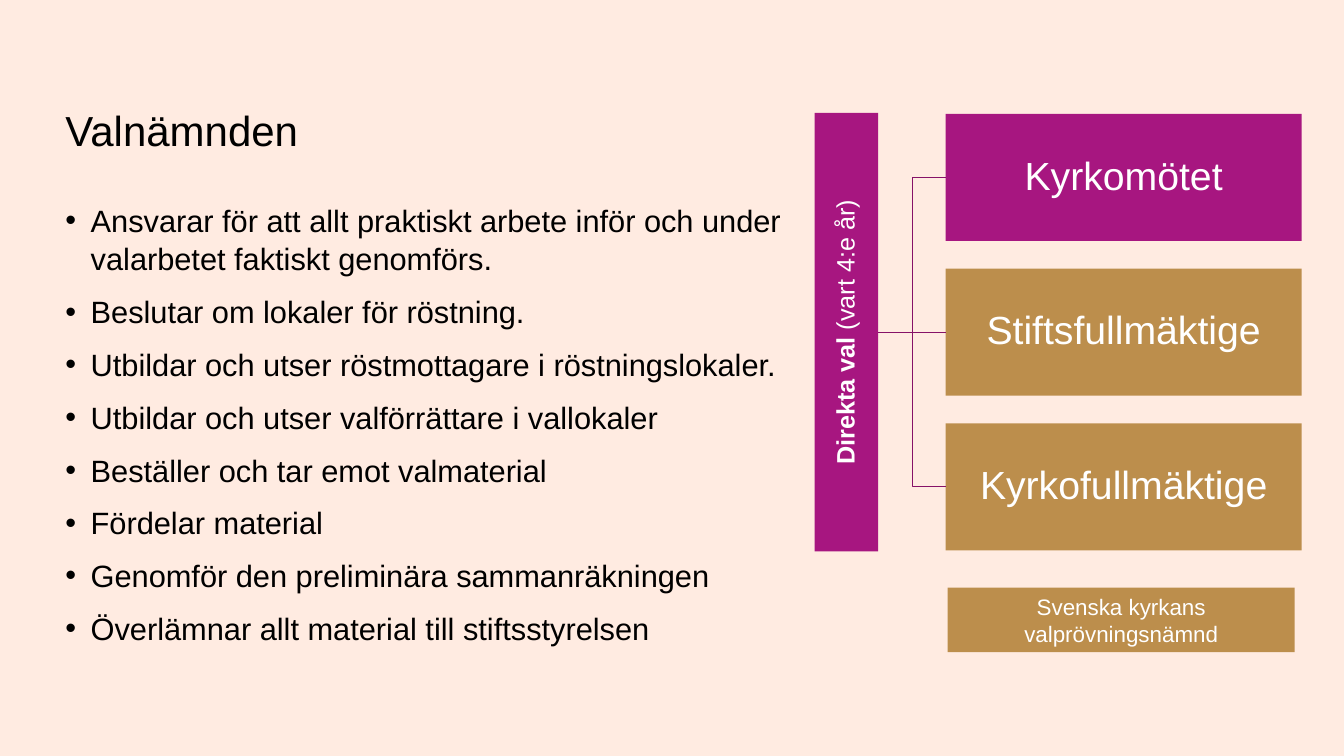
"""Build the slide on the election board and the direct elections."""
from lxml.etree import SubElement as Sub
from pptx import Presentation
from pptx.dml.color import RGBColor
from pptx.enum.shapes import MSO_CONNECTOR as Conn, MSO_SHAPE as Shape
from pptx.enum.text import MSO_ANCHOR as Anchor, PP_ALIGN as Align
from pptx.oxml.ns import qn
from pptx.util import Inches, Pt

CREAM = RGBColor(0xFF, 0xEB, 0xE1)
BLACK = RGBColor(0, 0, 0)
WHITE = RGBColor(0xFF, 0xFF, 0xFF)
PLUM = RGBColor(0xA7, 0x16, 0x80)
DARK = RGBColor(0x86, 0x12, 0x67)
GOLD = RGBColor(0xBC, 0x8E, 0x4C)

TASKS = [
    "Ansvarar för att allt praktiskt arbete inför och under valarbetet faktiskt genomförs.",
    "Beslutar om lokaler för röstning.",
    "Utbildar och utser röstmottagare i röstningslokaler.",
    "Utbildar och utser valförrättare i vallokaler",
    "Beställer och tar emot valmaterial",
    "Fördelar material",
    "Genomför den preliminära sammanräkningen",
    "Överlämnar allt material till stiftsstyrelsen",
]
BODIES = [
    ("Kyrkomötet", PLUM, Conn.ELBOW),
    ("Stiftsfullmäktige", GOLD, Conn.STRAIGHT),
    ("Kyrkofullmäktige", GOLD, Conn.ELBOW),
]


def write(frame, paras, size, color=BLACK, align=Align.LEFT, anchor=Anchor.TOP,
          inset=0, lead=1.0, gap=0, bullet=False):
    """Fill a text frame with paragraphs, each a list of (text, bold) runs."""
    frame.word_wrap = True
    frame.vertical_anchor = anchor
    frame.margin_left = frame.margin_right = Inches(inset)
    frame.margin_top = frame.margin_bottom = Inches(inset)
    for i, runs in enumerate(paras):
        para = frame.add_paragraph() if i else frame.paragraphs[0]
        if bullet:
            mark(para)
        para.alignment = align
        para.line_spacing = lead
        para.space_before = Pt(gap if i else 0)
        for text, bold in runs:
            run = para.add_run()
            run.text = text
            font = run.font
            font.name, font.size, font.bold = "Arial", Pt(size), bold
            font.color.rgb = color


def mark(para):
    """Give a paragraph a round bullet with a hanging indent."""
    props = para._p.get_or_add_pPr()
    props.set("marL", str(Inches(0.25)))
    props.set("indent", str(-Inches(0.25)))
    Sub(props, qn("a:buFont"), typeface="Arial")
    Sub(props, qn("a:buChar"), char="•")


def add_text(slide, spot, paras, size, **style):
    """Add a text box."""
    box = slide.shapes.add_textbox(*map(Inches, spot))
    write(box.text_frame, paras, size, **style)


def add_box(slide, spot, fill, runs, size, **style):
    """Add a filled rectangle with white centred text."""
    box = slide.shapes.add_shape(Shape.RECTANGLE, *map(Inches, spot))
    box.shadow.inherit = False
    box.fill.solid()
    box.fill.fore_color.rgb = fill
    box.line.fill.background()
    write(box.text_frame, [runs], size, color=WHITE, align=Align.CENTER,
          anchor=Anchor.MIDDLE, **style)
    return box


def link(slide, kind, start, end):
    """Join the right side of one box to the left side of another."""
    line = slide.shapes.add_connector(kind, 0, 0, 0, 0)
    line.begin_connect(start, 3)
    line.end_connect(end, 1)
    line.line.color.rgb = DARK
    line.line.width = Pt(0.5)
    Sub(line.element.spPr, qn("a:effectLst"))


def main():
    """Build and save the slide."""
    deck = Presentation()
    deck.slide_width, deck.slide_height = Inches(13.33), Inches(7.5)
    slide = deck.slides.add_slide(deck.slide_layouts[6])
    slide.background.fill.solid()
    slide.background.fill.fore_color.rgb = CREAM

    add_text(slide, (0.65, 0.32, 8.93, 1.22), [[("Valnämnden", False)]], 30,
             anchor=Anchor.BOTTOM)
    add_text(slide, (0.65, 1.98, 8.04, 3.11), [[(task, False)] for task in TASKS],
             22, lead=1.05, gap=10, bullet=True)

    root = add_box(slide, (8.08, 1.12, 0.63, 4.35), PLUM,
                   [("Direkta val", True), (" (vart 4:e år)", False)], 18,
                   inset=0.01, lead=0.9)
    root.element.txBody.bodyPr.set("vert", "vert270")
    for i, (name, fill, kind) in enumerate(BODIES):
        box = add_box(slide, (9.38, 1.13 + i * 1.535, 3.53, 1.26), fill,
                      [(name, False)], 28, inset=0.02, lead=0.9)
        link(slide, kind, root, box)
    add_box(slide, (9.4, 5.83, 3.44, 0.64), GOLD,
            [("Svenska kyrkans valprövningsnämnd", False)], 16, inset=0.05)
    deck.save("out.pptx")


if __name__ == "__main__":
    main()
